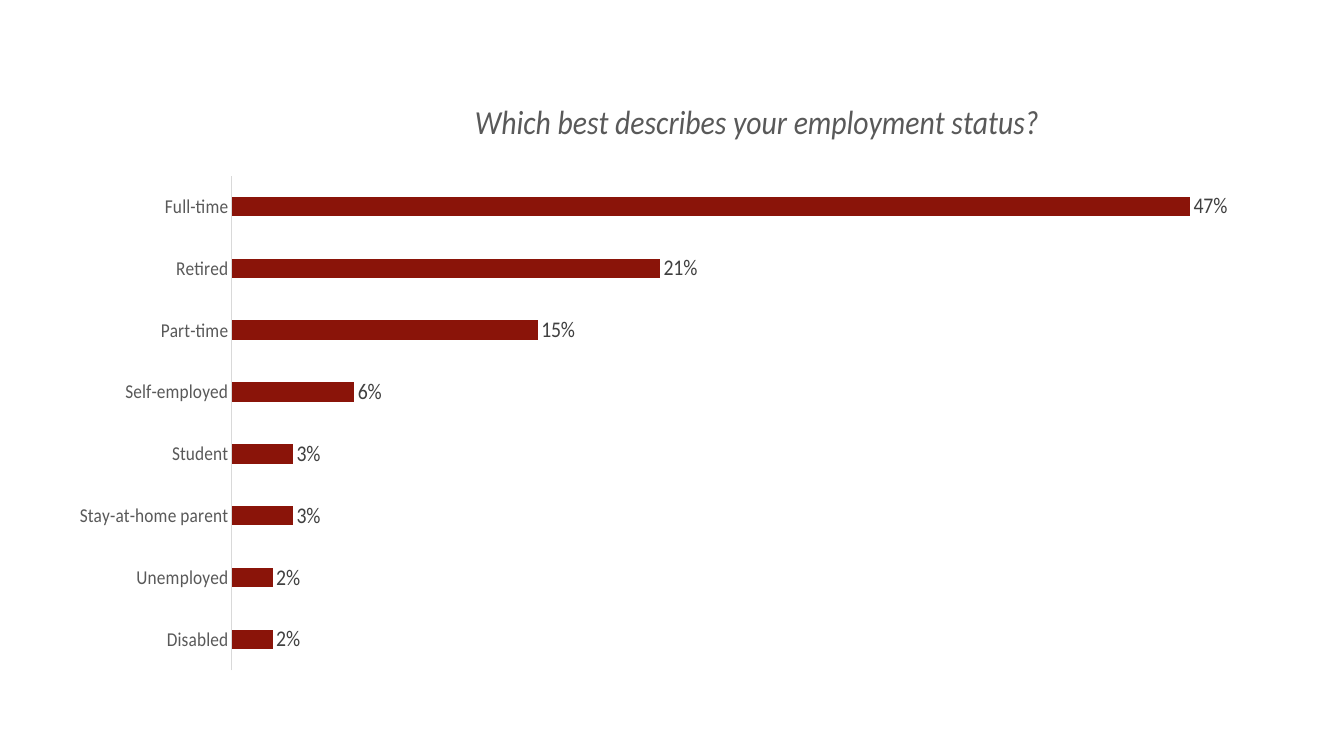
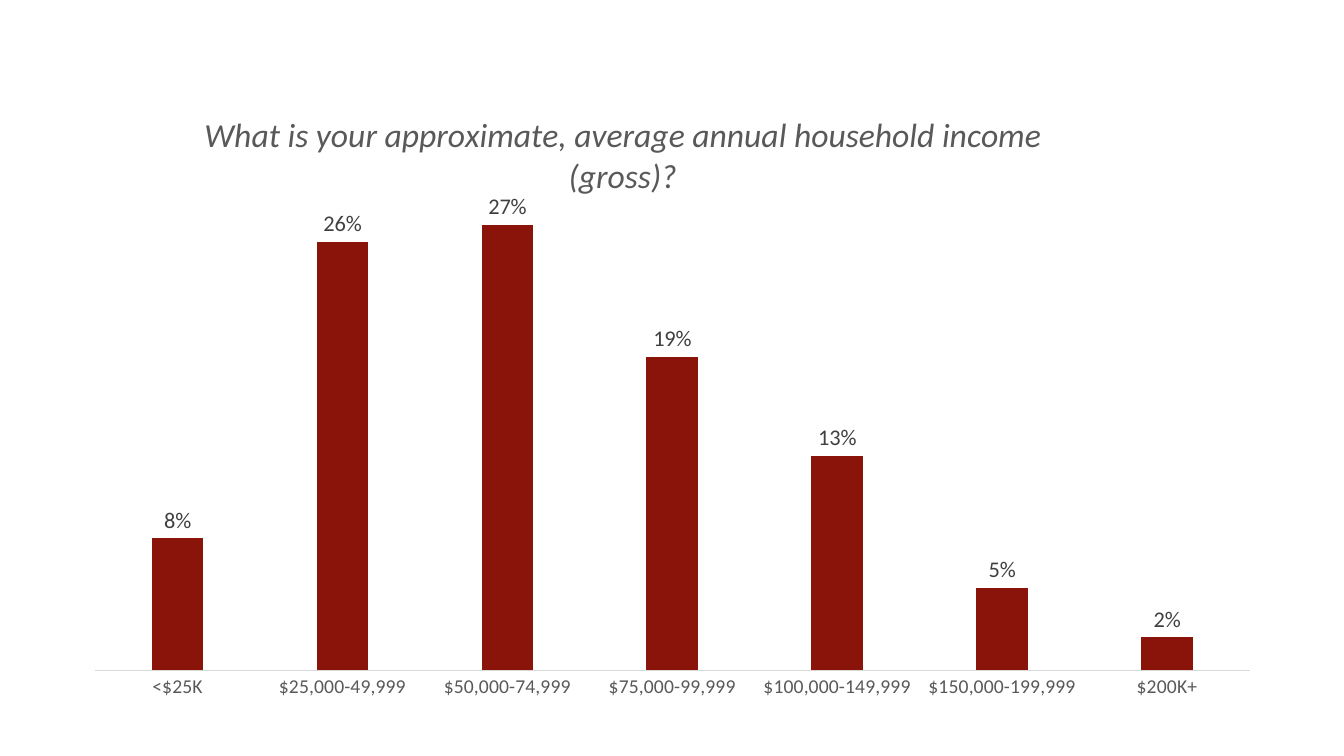
from lxml.etree import SubElement
from pptx import Presentation
from pptx.chart.data import CategoryChartData
from pptx.dml.color import RGBColor
from pptx.enum.chart import XL_CHART_TYPE, XL_LABEL_POSITION, XL_TICK_MARK
from pptx.oxml import parse_xml
from pptx.oxml.ns import nsdecls, qn
from pptx.util import Cm, Pt

FONT = "Calibri"
BAR_COLOR = "8A1409"
TEXT_COLOR = "595959"
LABEL_COLOR = "404040"
AXIS_COLOR = "D9D9D9"
PLOT_AREA = {"layoutTarget": "inner", "xMode": "edge", "yMode": "edge",
             "x": 0.013, "y": 0.191, "w": 0.974, "h": 0.721}

EMPLOYMENT = {
    "Full-time": 0.47, "Retired": 0.21, "Part-time": 0.15, "Self-employed": 0.06,
    "Student": 0.03, "Stay-at-home parent": 0.03, "Unemployed": 0.02, "Disabled": 0.02,
}
INCOME = {
    "<$25K": 0.08, "$25,000-49,999": 0.26, "$50,000-74,999": 0.27,
    "$75,000-99,999": 0.19, "$100,000-149,999": 0.13,
    "$150,000-199,999": 0.05, "$200K+": 0.02,
}


def color(hex_text):
    """Turn a hex string into a colour."""
    return RGBColor.from_string(hex_text)


def style_font(font, size, hex_text, italic=False):
    """Apply the shared typeface with a size and colour."""
    font.name = FONT
    font.size = Pt(size)
    font.bold = False
    font.italic = italic
    font.color.rgb = color(hex_text)


def set_layout(parent, position, settings):
    """Give a chart part a manual layout."""
    for old_layout in parent.findall(qn("c:layout")):
        parent.remove(old_layout)
    layout = parse_xml(f"<c:layout {nsdecls('c')}><c:manualLayout/></c:layout>")
    for name, value in settings.items():
        SubElement(layout[0], qn(f"c:{name}")).set("val", str(value))
    parent.insert(position, layout)


def style_title(chart, question, left, top):
    """Write the question as the chart title and place it."""
    title = chart.chart_title
    title.include_in_layout = False
    paragraph = title.text_frame.paragraphs[0]
    paragraph.text = question
    style_font(paragraph.font, 24, TEXT_COLOR, italic=True)
    set_layout(chart.element.find(f".//{qn('c:title')}"), 1,
               {"xMode": "edge", "yMode": "edge", "x": left, "y": top})


def style_axes(chart, maximum, reverse):
    """Show a plain category axis and hide the value axis."""
    category_axis = chart.category_axis
    category_axis.major_tick_mark = XL_TICK_MARK.NONE
    category_axis.minor_tick_mark = XL_TICK_MARK.NONE
    category_axis.has_major_gridlines = False
    category_axis.reverse_order = reverse
    category_axis.format.line.color.rgb = color(AXIS_COLOR)
    category_axis.format.line.width = Pt(0.75)
    style_font(category_axis.tick_labels.font, 14, TEXT_COLOR)
    value_axis = chart.value_axis
    value_axis.minimum_scale = 0
    value_axis.maximum_scale = maximum
    value_axis.has_major_gridlines = False
    value_axis.visible = False


def style_bars(plot):
    """Colour the bars and label them with percentages."""
    plot.gap_width = 219
    plot.vary_by_categories = False
    fill = plot.series[0].format.fill
    fill.solid()
    fill.fore_color.rgb = color(BAR_COLOR)
    plot.has_data_labels = True
    labels = plot.data_labels
    labels.show_value = True
    labels.position = XL_LABEL_POSITION.OUTSIDE_END
    labels.number_format = "0%"
    labels.number_format_is_linked = False
    style_font(labels.font, 16, LABEL_COLOR)


def add_survey_slide(presentation, chart_type, question, title_place, answers,
                     maximum, reverse=False):
    """Add a slide with one chart of survey answers."""
    slide = presentation.slides.add_slide(presentation.slide_layouts[6])
    data = CategoryChartData(number_format="0%")
    data.categories = answers.keys()
    data.add_series("Series 1", answers.values())
    chart = slide.shapes.add_chart(
        chart_type, Cm(2.01), Cm(1.12), Cm(29.87), Cm(17.3), data).chart
    chart.has_legend = False
    style_font(chart.font, 10, "000000")
    style_title(chart, question, *title_place)
    style_axes(chart, maximum, reverse)
    style_bars(chart.plots[0])
    set_layout(chart.element.find(f".//{qn('c:plotArea')}"), 0, PLOT_AREA)


def main():
    """Build and save the presentation."""
    presentation = Presentation()
    presentation.slide_width = Cm(33.87)
    presentation.slide_height = Cm(19.05)
    add_survey_slide(presentation, XL_CHART_TYPE.BAR_CLUSTERED,
                     "Which best describes your employment status?",
                     (0.24, 0.07), EMPLOYMENT, 0.5, reverse=True)
    add_survey_slide(presentation, XL_CHART_TYPE.COLUMN_CLUSTERED,
                     "What is your approximate, average annual household income (gross)?",
                     (0.1, 0.09), INCOME, 0.3)
    presentation.save("out.pptx")


if __name__ == "__main__":
    main()
